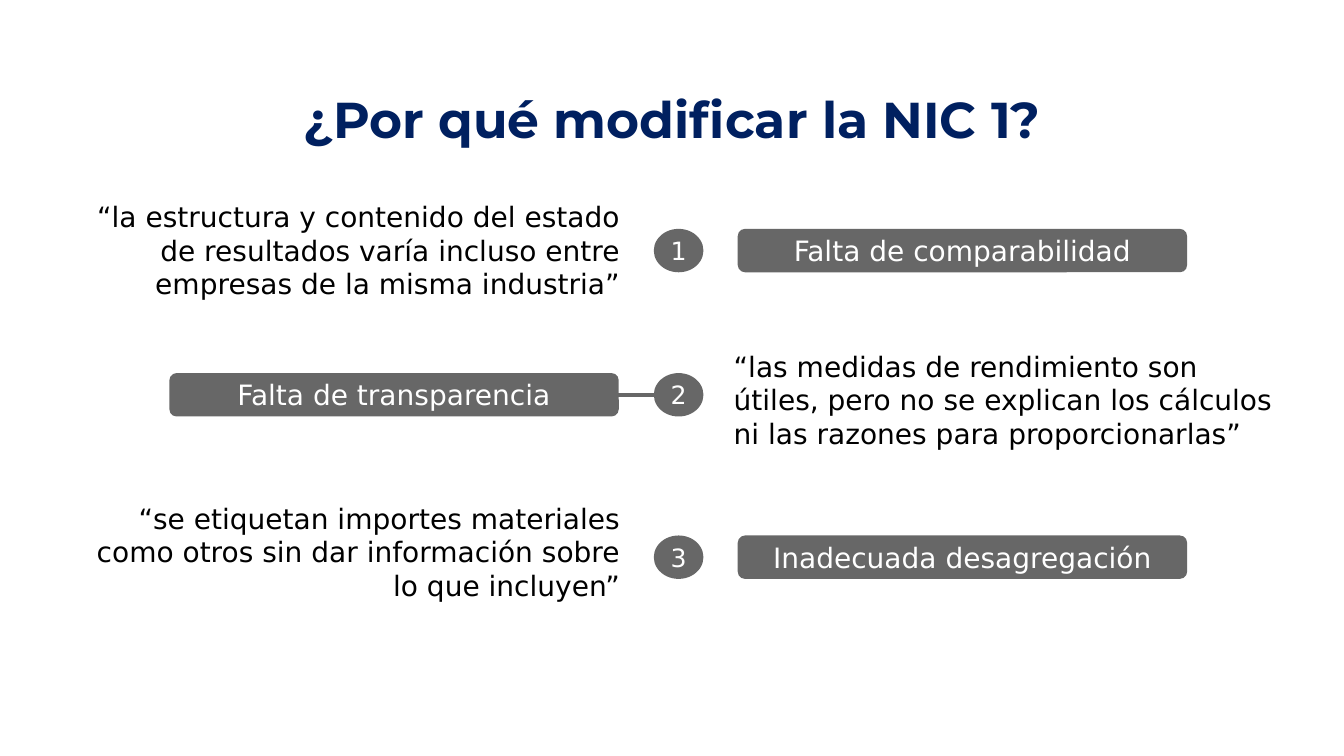
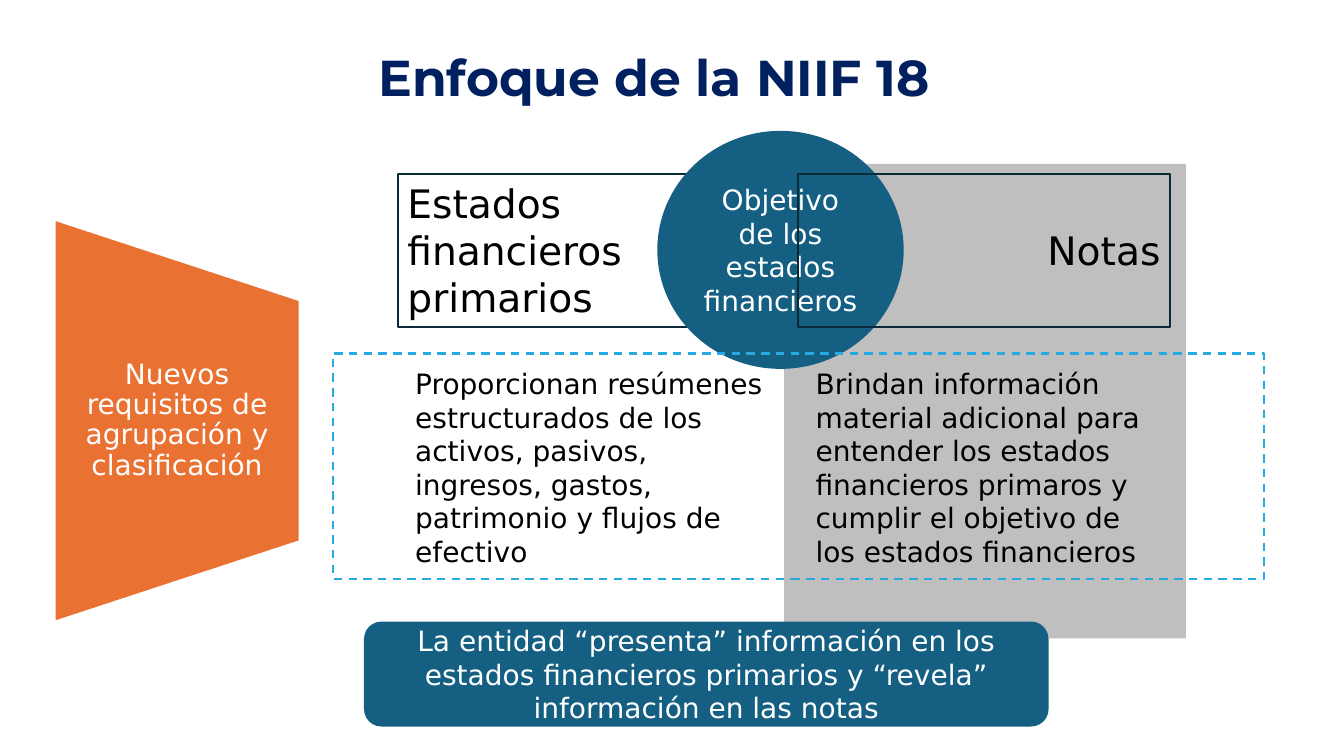
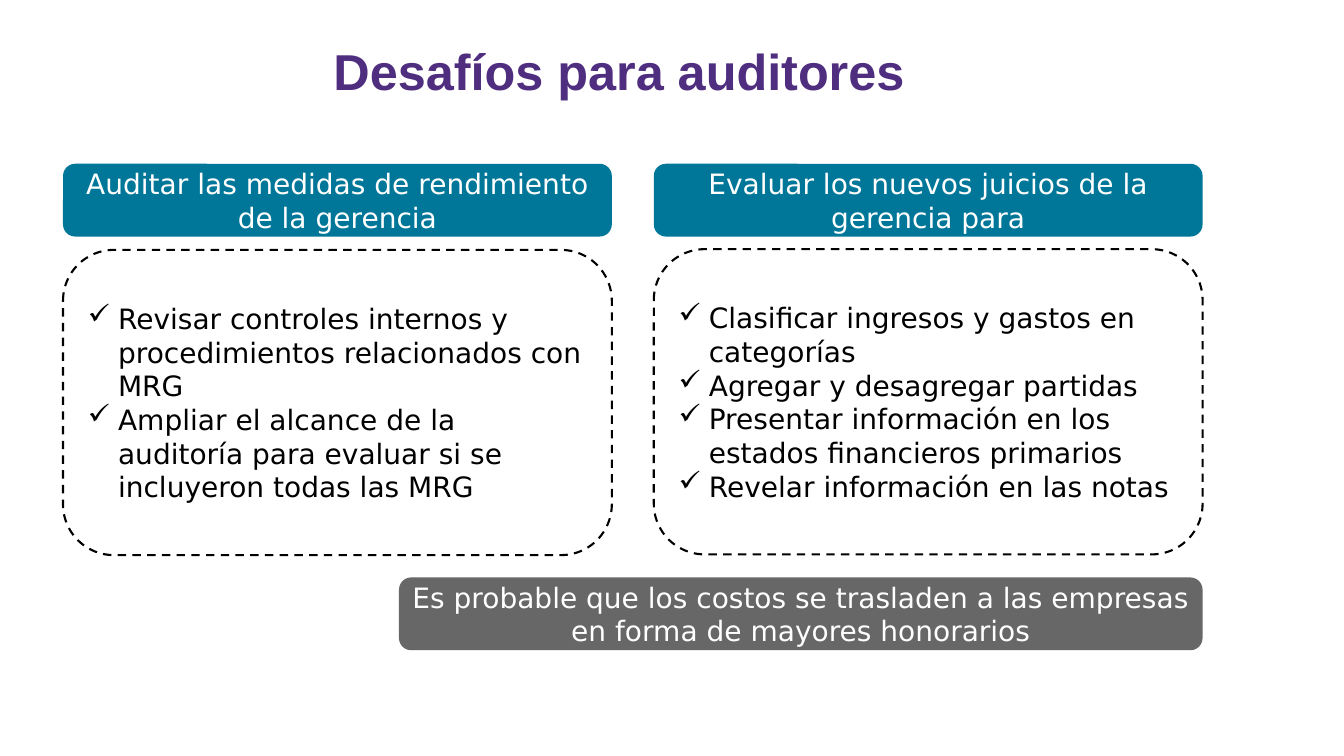
from pptx import Presentation
from pptx.dml.color import RGBColor
from pptx.enum.dml import MSO_LINE
from pptx.enum.shapes import MSO_CONNECTOR, MSO_SHAPE as Form
from pptx.enum.text import MSO_ANCHOR as Anchor, MSO_AUTO_SIZE, PP_ALIGN as Align
from pptx.oxml.ns import qn
from pptx.util import Pt
from lxml import etree

NAVY = RGBColor(0x00, 0x20, 0x60)
PURPLE = RGBColor(0x4F, 0x2D, 0x7F)
GRAY = RGBColor(0x67, 0x67, 0x67)
SILVER = RGBColor(0xBF, 0xBF, 0xBF)
ORANGE = RGBColor(0xE9, 0x71, 0x32)
BLUE = RGBColor(0x15, 0x60, 0x82)
TEAL = RGBColor(0x00, 0x77, 0x99)
SKY = RGBColor(0x27, 0xAA, 0xE2)
DARK = RGBColor(0x09, 0x2A, 0x39)
BLACK = RGBColor(0x00, 0x00, 0x00)
WHITE = RGBColor(0xFF, 0xFF, 0xFF)
BODY_FONT = "DejaVu Sans"

REASONS = [
    ("Falta de comparabilidad",
     "“la estructura y contenido del estado de resultados varía incluso entre "
     "empresas de la misma industria”", 179, 179),
    ("Falta de transparencia",
     "“las medidas de rendimiento son útiles, pero no se explican los cálculos "
     "ni las razones para proporcionarlas”", 282, 286),
    ("Inadecuada desagregación",
     "“se etiquetan importes materiales como otros sin dar información sobre "
     "lo que incluyen”", 398, 394.5),
]

GROUPING = "Nuevos requisitos de agrupación y clasificación"
OBJECTIVE = "Objetivo de los estados financieros"
STATEMENTS = (
    "Estados financieros primarios",
    "Proporcionan resúmenes estructurados de los activos, pasivos, ingresos, "
    "gastos, patrimonio y flujos de efectivo")
NOTES = (
    "Notas",
    "Brindan información material adicional para entender los estados "
    "financieros primaros y cumplir el objetivo de los estados financieros")
SUMMARY = ("La entidad “presenta” información en los estados financieros primarios "
           "y “revela” información en las notas")

CHALLENGES = [
    ("Auditar las medidas de rendimiento de la gerencia",
     ["Revisar controles internos y procedimientos relacionados con MRG",
      "Ampliar el alcance de la auditoría para evaluar si se incluyeron todas las MRG"],
     178.5),
    ("Evaluar los nuevos juicios de la gerencia para",
     ["Clasificar ingresos y gastos en categorías",
      "Agregar y desagregar partidas",
      "Presentar información en los estados financieros primarios",
      "Revelar información en las notas"],
     178),
]
COSTS = ("Es probable que los costos se trasladen a las empresas en forma de "
         "mayores honorarios")


def add_check(paragraph):
    properties = paragraph._p.get_or_add_pPr()
    indent = Pt(21.6)
    properties.set("marL", str(indent))
    properties.set("indent", str(-indent))
    bullet = etree.SubElement(properties, qn("a:buChar"))
    bullet.set("char", "✓")


def write(shape, lines, color, size=20, font=BODY_FONT, bold=False, align=Align.CENTER,
          anchor=Anchor.MIDDLE, spacing=None, checks=False):
    frame = shape.text_frame
    frame.word_wrap = True
    frame.auto_size = MSO_AUTO_SIZE.NONE
    frame.vertical_anchor = anchor
    for index, line in enumerate(lines):
        paragraph = frame.add_paragraph() if index else frame.paragraphs[0]
        paragraph.alignment = align
        if spacing:
            paragraph.line_spacing = spacing
        if checks:
            add_check(paragraph)
        run = paragraph.add_run()
        run.text = line
        run.font.name = font
        run.font.size = Pt(size)
        run.font.bold = bold
        run.font.color.rgb = color
    return frame


def add_text(slide, box, text, color=BLACK, **style):
    shape = slide.shapes.add_textbox(*map(Pt, box))
    return write(shape, [text], color, **style)


def add_form(slide, form, box, fill=None, outline=None, dashed=False):
    shape = slide.shapes.add_shape(form, *map(Pt, box))
    shape.shadow.inherit = False
    if fill is None:
        shape.fill.background()
    else:
        shape.fill.solid()
        shape.fill.fore_color.rgb = fill
    if outline is None:
        shape.line.fill.background()
    else:
        shape.line.color.rgb = outline
        shape.line.width = Pt(1.5)
        if dashed:
            shape.line.dash_style = MSO_LINE.DASH
    return shape


def add_band(slide, box, text, fill):
    write(add_form(slide, Form.ROUNDED_RECTANGLE, box, fill), [text], WHITE)


def add_slide(presentation, title, box, color=NAVY, font="Montserrat",
              align=Align.CENTER, spacing=0.9):
    slide = presentation.slides.add_slide(presentation.slide_layouts[5])
    shape = slide.shapes.title
    shape.left, shape.top, shape.width, shape.height = map(Pt, box)
    write(shape, [title], color, 36, font, True, align, spacing=spacing)
    return slide


def build_reasons(presentation):
    slide = add_slide(presentation, "¿Por qué modificar la NIC 1?", (38, 35, 884, 104))
    quote_width, quote_height = 400, 80
    label_width, label_height = 321, 31
    circle_left, circle_width = 467, 35.5

    middle = REASONS[1][2]
    connector = slide.shapes.add_connector(
        MSO_CONNECTOR.STRAIGHT, Pt(418), Pt(middle), Pt(482), Pt(middle))
    connector.line.color.rgb = GRAY
    connector.line.width = Pt(3)
    etree.SubElement(connector._element.spPr, qn("a:effectLst"))

    for number, (label, quote, center, quote_center) in enumerate(REASONS, 1):
        quote_on_left = number % 2 == 1
        quote_left = 450 - quote_width if quote_on_left else 517
        label_left = 527 if quote_on_left else 121
        add_text(slide, (quote_left, quote_center - quote_height / 2, quote_width, quote_height),
                 quote, align=Align.RIGHT if quote_on_left else Align.LEFT, anchor=Anchor.TOP)
        label_top = center - label_height / 2
        add_band(slide, (label_left, label_top, label_width, label_height), label, GRAY)
        circle = add_form(slide, Form.OVAL,
                          (circle_left, label_top, circle_width, label_height), GRAY)
        frame = write(circle, [str(number)], WHITE, 18)
        frame.margin_left = frame.margin_right = 0


def build_approach(presentation):
    slide = add_slide(presentation, "Enfoque de la NIIF 18", (25, 5.5, 884, 104))
    add_form(slide, Form.RECTANGLE, (560, 117, 287, 339), SILVER)

    center_x, center_y, long_side, short_side = 126.5, 300.5, 285, 173.5
    funnel = add_form(slide, Form.FLOWCHART_MANUAL_OPERATION,
                      (center_x - long_side / 2, center_y - short_side / 2,
                       long_side, short_side), ORANGE)
    funnel.rotation = 270
    frame = add_text(slide, (center_x - short_side / 2, center_y - short_side / 2,
                             short_side, short_side), GROUPING, WHITE, spacing=0.9)
    frame.margin_left = frame.margin_right = Pt(10)
    frame.margin_top = frame.margin_bottom = 0

    def add_heading(left, text, align):
        box = add_form(slide, Form.RECTANGLE, (left, 124, 266, 109.5), outline=DARK)
        write(box, [text], BLACK, 28, align=align)

    add_heading(284, STATEMENTS[0], Align.LEFT)
    circle = add_form(slide, Form.OVAL, (469.5, 93.5, 176, 170), BLUE)
    write(circle, [OBJECTIVE], WHITE)
    for left, text in ((289.5, STATEMENTS[1]), (575.5, NOTES[1])):
        add_text(slide, (left, 262, 266, 143.5), text, align=Align.LEFT)
    add_band(slide, (260, 444, 489, 75), SUMMARY, BLUE)
    add_form(slide, Form.RECTANGLE, (238, 252.5, 665, 161), outline=SKY, dashed=True)
    add_heading(570, NOTES[0], Align.RIGHT)


def build_challenges(presentation):
    slide = add_slide(presentation, "Desafíos para auditores", (231, 25, 681, 51),
                      PURPLE, "Arial", Align.LEFT, 1)
    left, width, gap, band_height = 45, 392, 30, 52
    for column, (heading, tasks, top) in enumerate(CHALLENGES):
        x = left + column * (width + gap)
        add_band(slide, (x, 117, width, band_height), heading, TEAL)
        panel = add_form(slide, Form.ROUNDED_RECTANGLE, (x, top, width, 218),
                         outline=BLACK, dashed=True)
        write(panel, tasks, BLACK, align=Align.LEFT, checks=True)
    right = left + 2 * width + gap
    add_band(slide, (285, 412.5, right - 285, band_height), COSTS, GRAY)


def main():
    presentation = Presentation()
    presentation.slide_width = Pt(960)
    presentation.slide_height = Pt(540)
    build_reasons(presentation)
    build_approach(presentation)
    build_challenges(presentation)
    presentation.save("out.pptx")


if __name__ == "__main__":
    main()
